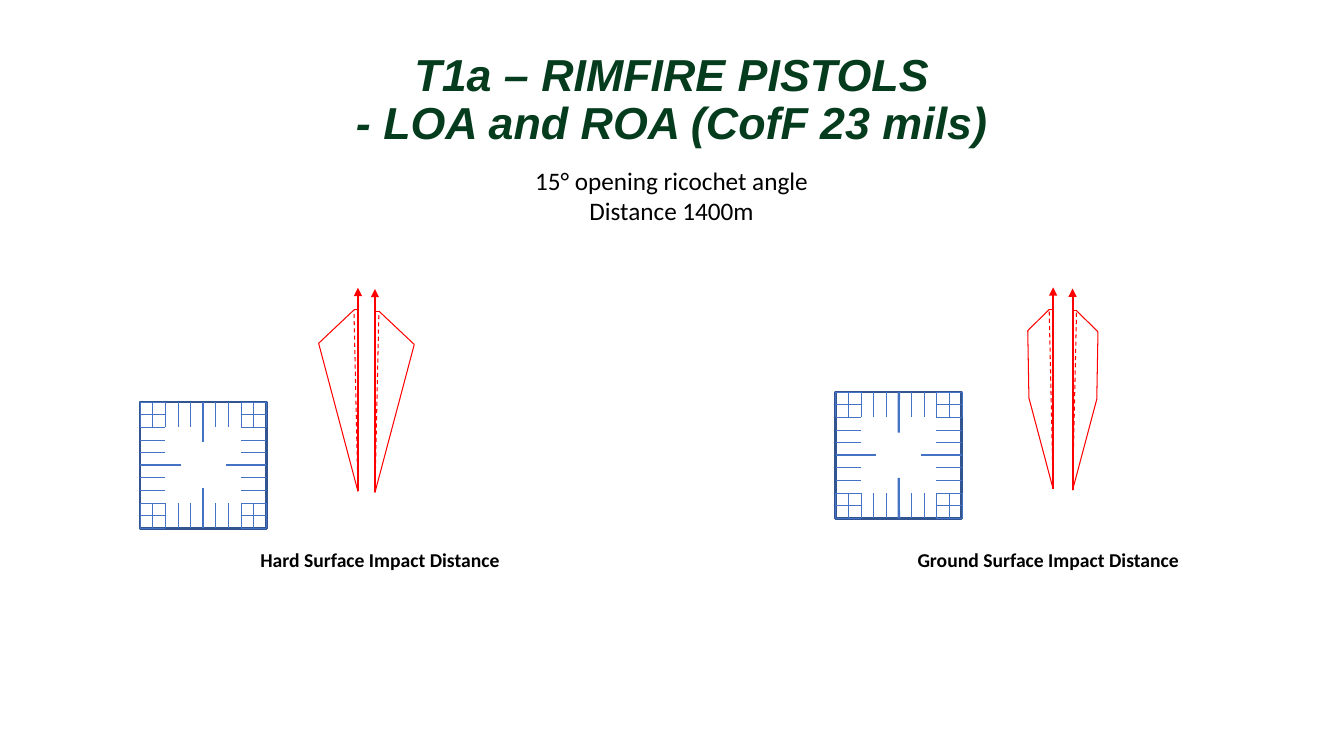
from dataclasses import dataclass

from lxml import etree
from pptx import Presentation
from pptx.dml.color import RGBColor
from pptx.enum.dml import MSO_LINE_DASH_STYLE
from pptx.enum.shapes import MSO_AUTO_SHAPE_TYPE, MSO_CONNECTOR_TYPE
from pptx.enum.text import MSO_ANCHOR, MSO_AUTO_SIZE, PP_PARAGRAPH_ALIGNMENT
from pptx.oxml.ns import qn
from pptx.util import Cm, Pt

RECTANGLE = MSO_AUTO_SHAPE_TYPE.RECTANGLE
STRAIGHT = MSO_CONNECTOR_TYPE.STRAIGHT
DASH = MSO_LINE_DASH_STYLE.DASH
MIDDLE = MSO_ANCHOR.MIDDLE
TOP = MSO_ANCHOR.TOP
GROW = MSO_AUTO_SIZE.SHAPE_TO_FIT_TEXT
FIXED = MSO_AUTO_SIZE.NONE
CENTER = PP_PARAGRAPH_ALIGNMENT.CENTER

SQUARE_SIDE = 3.18
DIVISIONS = 10
SHORT_TICK = 0.64
LONG_TICK = 1.02
LEFT_SIDE_RISE = 0.03


@dataclass(frozen=True)
class Theme:
    title_color: RGBColor = RGBColor(0x05, 0x3C, 0x1E)
    text_color: RGBColor = RGBColor(0x00, 0x00, 0x00)
    frame_color: RGBColor = RGBColor(0x32, 0x54, 0x91)
    tick_color: RGBColor = RGBColor(0x44, 0x72, 0xC4)
    danger_color: RGBColor = RGBColor(0xFF, 0x00, 0x00)
    title_font: str = "Arial"
    body_font: str = "Calibri"
    title_size: Pt = Pt(32)
    body_size: Pt = Pt(18)
    label_size: Pt = Pt(14)
    frame_width: Pt = Pt(2)
    long_tick_width: Pt = Pt(1.75)
    arrow_width: Pt = Pt(1.5)
    edge_width: Pt = Pt(0.75)
    tick_width: Pt = Pt(0.5)


THEME = Theme()
TITLE_FORMAT = {"name": THEME.title_font, "size": THEME.title_size, "bold": True, "italic": True}
BODY_FORMAT = {"name": THEME.body_font, "size": THEME.body_size}
LABEL_FORMAT = {"name": THEME.body_font, "size": THEME.label_size, "bold": True}


def apply_format(target, values):
    for name, value in values.items():
        setattr(target, name, value)


def add_text(slide, lines, box, font_format, color=THEME.text_color,
             spacing=1.0, anchor=TOP, auto_size=GROW):
    shape = slide.shapes.add_textbox(*map(Cm, box))
    frame = shape.text_frame
    apply_format(frame, {"word_wrap": True, "auto_size": auto_size, "vertical_anchor": anchor})
    for index, line in enumerate(lines):
        paragraph = frame.add_paragraph() if index else frame.paragraphs[0]
        paragraph.text = line
        apply_format(paragraph, {"alignment": CENTER, "line_spacing": spacing})
        apply_format(paragraph.font, font_format)
        paragraph.font.color.rgb = color


def add_line(group, start, end, color, width, dashed=False, arrow=False):
    connector = group.shapes.add_connector(STRAIGHT, *map(Cm, (*start, *end)))
    connector.line.color.rgb = color
    connector.line.width = width
    if dashed:
        connector.line.dash_style = DASH
    if arrow:
        line = connector.line._get_or_add_ln()
        etree.SubElement(line, qn("a:tailEnd"), type="triangle")
    etree.SubElement(connector._element.spPr, qn("a:effectLst"))
    return connector


def add_grid_square(group, left, top):
    frame = group.shapes.add_shape(RECTANGLE, *map(Cm, (left, top, SQUARE_SIDE, SQUARE_SIDE)))
    frame.shadow.inherit = False
    frame.fill.background()
    frame.line.color.rgb = THEME.frame_color
    frame.line.width = THEME.frame_width
    right, bottom = left + SQUARE_SIDE, top + SQUARE_SIDE
    for index in range(DIVISIONS + 1):
        offset = index * SQUARE_SIDE / DIVISIONS
        central = index == DIVISIONS / 2
        length = LONG_TICK if central else SHORT_TICK
        width = THEME.long_tick_width if central else THEME.tick_width
        x, y = left + offset, top + offset
        ticks = [
            ((x, top), (x, top + length)),
            ((left, y), (left + length, y)),
            ((x, bottom), (x, bottom - length)),
            ((right, y), (right - length, y)),
        ]
        for side, (start, end) in enumerate(ticks):
            tick = add_line(group, start, end, THEME.tick_color, width)
            if central:
                tick.begin_connect(frame, side)


def add_danger_side(group, axis, muzzle, direction, arrow_length, outline):
    def place(offset, distance):
        return axis + direction * offset, muzzle - distance

    origin = place(0, 0)
    shoulder = outline[-1]
    add_line(group, origin, place(0, arrow_length), THEME.danger_color,
             THEME.arrow_width, arrow=True)
    add_line(group, origin, place(*shoulder), THEME.danger_color,
             THEME.edge_width, dashed=True)
    corners = [origin, *(place(*point) for point in outline), place(0, shoulder[1])]
    for start, end in zip(corners, corners[1:]):
        add_line(group, start, end, THEME.danger_color, THEME.edge_width)


def add_danger_area(slide, square, axes, muzzle, arrow_length, outline):
    group = slide.shapes.add_group_shape()
    add_grid_square(group, *square)
    left_axis, right_axis = axes
    add_danger_side(group, right_axis, muzzle, 1, arrow_length, outline)
    add_danger_side(group, left_axis, muzzle - LEFT_SIDE_RISE, -1, arrow_length, outline)


def main():
    presentation = Presentation()
    presentation.slide_width = Cm(33.87)
    presentation.slide_height = Cm(19.05)
    slide = presentation.slides.add_slide(presentation.slide_layouts[6])

    add_text(slide, ["Hard Surface Impact Distance"], (4.78, 13.67, 9.6, 0.86), LABEL_FORMAT)
    add_text(slide, ["Ground Surface Impact Distance"], (21.62, 13.69, 9.6, 1.45), LABEL_FORMAT)
    add_text(slide, ["T1a – RIMFIRE PISTOLS", "- LOA and ROA (CofF 23 mils)"],
             (0, 1.09, 33.87, 2.92), TITLE_FORMAT, THEME.title_color, 0.9, MIDDLE, FIXED)

    add_danger_area(slide, (3.53, 10.13), (9.02, 9.45), 12.41, 5.13,
                    [(0.99, 3.73), (0.1, 4.57)])
    add_danger_area(slide, (21.06, 9.88), (26.54, 27.03), 12.35, 5.08,
                    [(0.61, 2.29), (0.64, 3.99), (0.1, 4.52)])

    add_text(slide, ["15° opening ricochet angle", "Distance 1400m"],
             (11.73, 4.04, 10.39, 1.8), BODY_FORMAT)
    presentation.save("out.pptx")


if __name__ == "__main__":
    main()
